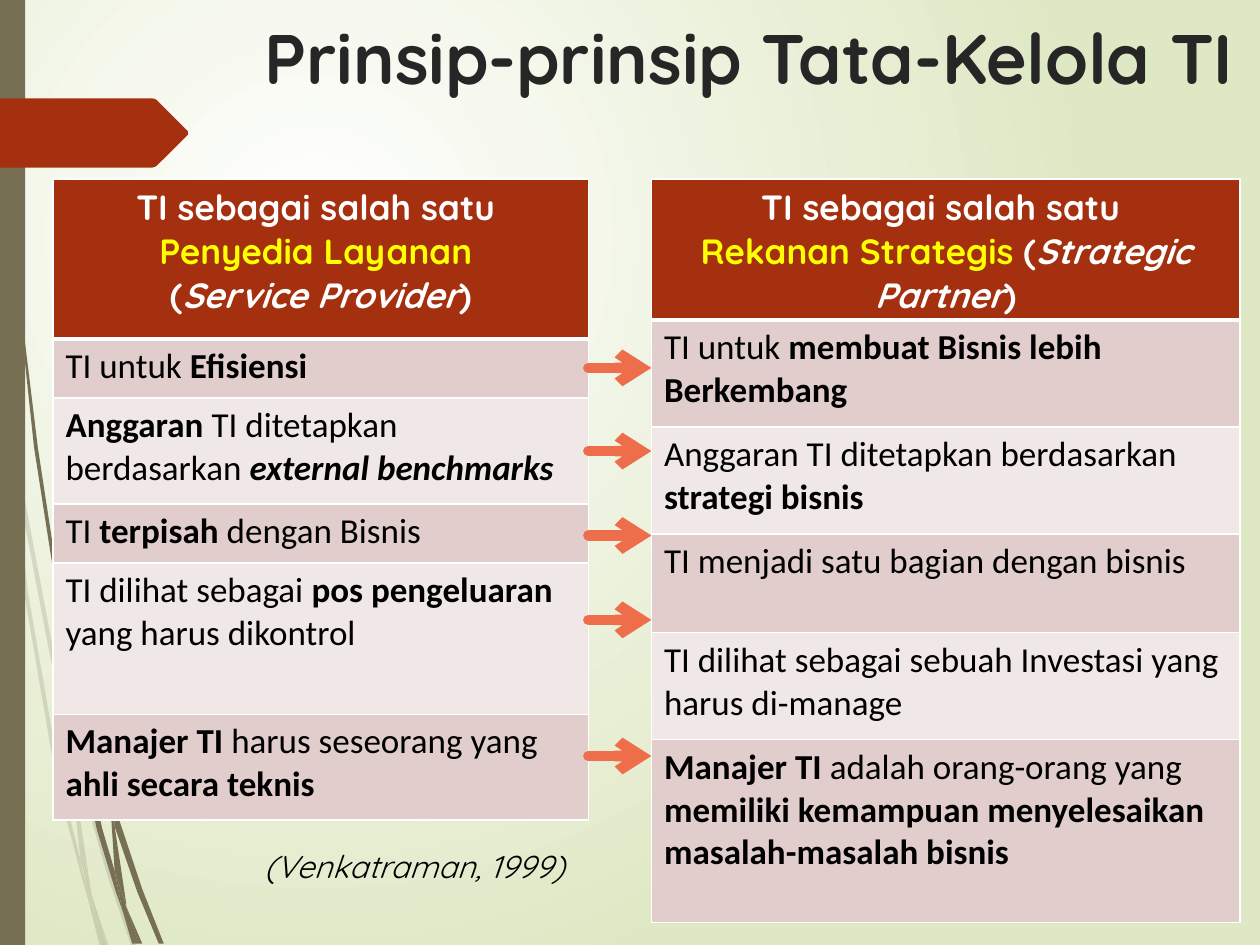
from dataclasses import dataclass
from functools import partial

from lxml.etree import SubElement as Sub
from pptx import Presentation
from pptx.dml.color import RGBColor as Rgb
from pptx.enum.shapes import MSO_CONNECTOR as Link, MSO_SHAPE as Form
from pptx.enum.text import PP_ALIGN as Align
from pptx.oxml.ns import qn
from pptx.util import Inches, Pt


@dataclass(frozen=True)
class Theme:
    head: str = "Quicksand"
    body: str = "Calibri"
    big: int = 40
    mid: int = 20
    small: int = 18
    dark: str = "262626"
    black: str = "000000"
    white: str = "FFFFFF"
    green: str = "DFE8C4"
    olive: str = "766F54"
    red: str = "A53010"
    gold: str = "FFFF00"
    coral: str = "EE6E4B"
    bands: tuple = ("E1CDCC", "F0E8E7")


def run(text, **look):
    return text, look


bold = partial(run, bold=True)
both = partial(run, bold=True, italic=True)
gold = partial(bold, color=Theme.gold)

FAINT = [
    [(.08, 3.5), (.06, 3.22), (0, 2.82), (0, 2.99), (.07, 3.44)],
    [(.4, 5.22), (.59, 5.99), (.59, 5.86), (.43, 5.2), (.1, 3.45), (.12, 3.76)],
    [(.64, 6.07), (.61, 5.96), (.61, 6.1), (.85, 6.94), (1.04, 7.5), (1.08, 7.5), (.88, 6.92)],
    [(.83, 7.5), (.86, 7.5), (.73, 7.11)],
    [(.64, 6.83), (.48, 6.19), (.22, 4.69), (.12, 3.76), (.08, 3.5), (.19, 4.7),
     (.45, 6.21), (.64, 6.93), (.7, 7.14), (.69, 7.07)],
    [(.58, 5.99), (.6, 6.46), (.64, 6.83), (.67, 6.92), (.73, 7.11), (.72, 7.06),
     (.63, 6.46), (.61, 6.1), (.61, 6.08)],
    [(.61, 5.84), (.76, 4.62), (1.11, 3.49), (1.59, 2.45), (1.87, 1.98), (2.01, 1.75),
     (2.17, 1.54), (2.17, 1.53), (2.01, 1.75), (1.86, 1.97), (1.58, 2.44), (1.1, 3.48),
     (.75, 4.61), (.59, 5.84), (.61, 5.96)],
    [(.7, 7.14), (.79, 7.5), (.82, 7.5)],
    [(.61, 6.08), (.61, 5.96), (.59, 5.86), (.58, 5.99)],
    [(.67, 6.92), (.65, 6.83), (.69, 7.07), (.7, 7.14), (.82, 7.5), (.83, 7.5), (.73, 7.11)],
]
SOLID = [
    [(.05, 1.1), (.14, 2.33), (.27, 3.55), (.46, 4.77), (.47, 4.81), (.45, 4.53),
     (.3, 3.55), (.15, 2.32), (.06, 1.09), (.04, .48), (.03, 0), (.02, 0), (.03, .48)],
    [(.73, 5.92), (.88, 6.45), (.88, 6.31), (.77, 5.9), (.5, 4.72), (.53, 5.05)],
    [(.94, 6.49), (.91, 6.41), (.91, 6.56), (1.09, 7.08), (1.26, 7.49), (1.3, 7.49), (1.13, 7.06)],
    [(.91, 6.91), (.81, 6.57), (.6, 5.56), (.53, 5.05), (.47, 4.77), (.56, 5.57),
     (.77, 6.59), (.92, 7.08), (.97, 7.22), (.96, 7.17)],
    [(.5, 4.72), (.48, 4.53), (.44, 3.49), (.48, 2.45), (.52, 1.93), (.58, 1.41),
     (.51, 1.93), (.47, 2.45), (.43, 3.49), (.45, 4.49), (.49, 4.72)],
    [(1.1, 7.49), (1.13, 7.49), (1, 7.19)],
    [(.47, 4.77), (.53, 5.05), (.5, 4.72), (.45, 4.49), (.45, 4.53)],
    [(.91, 6.33), (1.03, 5.52), (1.31, 4.76), (1.69, 4.06), (1.91, 3.74), (2.03, 3.59),
     (2.16, 3.44), (2.03, 3.58), (1.91, 3.73), (1.68, 4.05), (1.29, 4.74), (1.01, 5.51),
     (.88, 6.31), (.91, 6.41)],
    [(.97, 7.22), (1.05, 7.49), (1.08, 7.49)],
    [(.88, 6.45), (.91, 6.91), (.96, 7.06), (1, 7.19), (1, 7.16), (.91, 6.56), (.9, 6.51)],
    [(.88, 6.45), (.91, 6.56), (.91, 6.41), (.88, 6.31)],
    [(.96, 7.06), (.91, 6.91), (.96, 7.17), (.97, 7.22), (1.08, 7.49), (1.1, 7.49), (1, 7.19)],
]
TAG = [(1.49, 1.07), (1.24, 1.32), (1.21, 1.33), (0, 1.33), (0, .78), (1.21, .78),
       (1.24, .79), (1.49, 1.04)]

LEFT = [
    (1.27, [bold("TI sebagai salah satu \n"), gold("Penyedia Layanan \n"), bold("("),
            both("Service Provider"), bold(")")]),
    (.47, [run("TI untuk "), bold("Efisiensi")]),
    (.84, [bold("Anggaran "), run("TI ditetapkan berdasarkan "), both("external benchmarks")]),
    (.47, [run("TI "), bold("terpisah "), run("dengan Bisnis")]),
    (1.2, [run("TI dilihat sebagai "), bold("pos pengeluaran "), run("yang harus dikontrol")]),
    (.84, [bold("Manajer TI "), run("harus seseorang yang "), bold("ahli secara teknis")]),
]
RIGHT = [
    (1.12, [bold("TI sebagai salah satu \n"), gold("Rekanan Strategis "), bold("("),
            both("Strategic Partner"), bold(")")]),
    (.85, [run("TI untuk "), bold("membuat Bisnis lebih Berkembang")]),
    (.85, [run("Anggaran TI ditetapkan berdasarkan "), bold("strategi bisnis")]),
    (.78, [run("TI menjadi satu bagian dengan bisnis")]),
    (.85, [run("TI dilihat sebagai sebuah Investasi yang harus di-manage")]),
    (1.45, [bold("Manajer TI "), run("adalah orang-orang yang "),
            bold("memiliki kemampuan menyelesaikan masalah-masalah bisnis")]),
]


class Deck:
    """Draws styled elements on the current slide."""

    def __init__(self, show, theme):
        self.theme = theme
        self.slide = show.slides.add_slide(show.slide_layouts[6])
        self.shapes = self.slide.shapes

    def back(self):
        fill = self.slide.background.fill
        fill.gradient()
        for stop, hue in zip(fill.gradient_stops, (self.theme.white, self.theme.green)):
            stop.color.rgb = Rgb.from_string(hue)
        grad = self.slide.element.find(".//" + qn("a:gradFill"))
        grad.remove(grad.find(qn("a:lin")))
        glow = Sub(grad, qn("a:path"), {"path": "circle"})
        Sub(glow, qn("a:fillToRect"), l="50000", t="50000", r="100000", b="100000")

    def paint(self, shape, hue, alpha=None):
        shape.shadow.inherit = False
        shape.fill.solid()
        shape.fill.fore_color.rgb = Rgb.from_string(hue)
        shape.line.fill.background()
        if alpha:
            tone = shape.element.spPr.find(".//" + qn("a:srgbClr"))
            Sub(tone, qn("a:alpha"), val=str(alpha * 1000))

    def bar(self, x, y, wide, high, hue):
        box = map(Inches, (x, y, wide, high))
        self.paint(self.shapes.add_shape(Form.RECTANGLE, *box), hue)

    def blade(self, dots, hue, alpha=None):
        first, *rest = [(Inches(x), Inches(y)) for x, y in dots]
        pen = self.shapes.build_freeform(*first)
        pen.add_line_segments(rest, close=True)
        self.paint(pen.convert_to_shape(), hue, alpha)

    def words(self, para, runs, font, size, color):
        for text, look in runs:
            piece = para.add_run()
            piece.text = text.rstrip("\n")
            face = piece.font
            face.name, face.size = font, Pt(size)
            face.bold = look.get("bold", False)
            face.italic = look.get("italic", False)
            face.color.rgb = Rgb.from_string(look.get("color", color))
            if text.endswith("\n"):
                para.add_line_break()

    def text(self, x, y, wide, high, piece, size, color, wrap=True):
        frame = self.shapes.add_textbox(*map(Inches, (x, y, wide, high))).text_frame
        frame.word_wrap = wrap
        self.words(frame.paragraphs[0], [piece], self.theme.head, size, color)

    def edge(self, cell, base):
        props = cell._tc.get_or_add_tcPr()
        for spot, (side, wide) in enumerate(zip("LRTB", (1, 1, 1, base))):
            line = props.makeelement(qn(f"a:ln{side}"), {"w": str(Pt(wide))})
            props.insert(spot, line)
            Sub(Sub(line, qn("a:solidFill")), qn("a:srgbClr"), val=self.theme.white)

    def table(self, x, y, wide, rows):
        look = self.theme
        high = sum(size for size, _ in rows)
        box = map(Inches, (x, y, wide, high))
        grid = self.shapes.add_table(len(rows), 1, *box).table
        for spot, (size, runs) in enumerate(rows):
            top = spot == 0
            grid.rows[spot].height = Inches(size)
            cell = grid.cell(spot, 0)
            cell.fill.solid()
            hue = look.red if top else look.bands[(spot - 1) % 2]
            cell.fill.fore_color.rgb = Rgb.from_string(hue)
            self.edge(cell, 3 if top else 1)
            para = cell.text_frame.paragraphs[0]
            para.alignment = Align.CENTER if top else Align.LEFT
            font, ink = (look.head, look.white) if top else (look.body, look.black)
            self.words(para, runs, font, look.mid, ink)

    def arrow(self, x, end, y):
        ends = map(Inches, (x, y, end, y))
        link = self.shapes.add_connector(Link.STRAIGHT, *ends)
        link.line.color.rgb = Rgb.from_string(self.theme.coral)
        link.line.width = Pt(6)
        line = link.element.spPr.find(qn("a:ln"))
        line.set("cap", "rnd")
        Sub(line, qn("a:tailEnd"), type="arrow")
        Sub(link.element.spPr, qn("a:effectLst"))


def main():
    show = Presentation()
    show.slide_width, show.slide_height = Inches(10), Inches(7.5)
    look = Theme()
    deck = Deck(show, look)
    deck.back()
    for dots in FAINT:
        deck.blade(dots, look.olive, 20)
    for dots in SOLID:
        deck.blade(dots, look.olive)
    deck.bar(0, 0, .2, 7.5, look.olive)
    deck.blade(TAG, look.red)
    deck.text(2, .07, 7.92, 1.4, bold("Prinsip-prinsip Tata-Kelola TI"), look.big, look.dark)
    deck.table(.42, 1.42, 4.25, LEFT)
    deck.table(5.17, 1.42, 4.67, RIGHT)
    for y in (2.92, 3.58, 4.25, 4.92, 6):
        deck.arrow(4.67, 5.17, y)
    note = run("(Venkatraman, 1999)", italic=True)
    deck.text(2, 6.67, 2.78, .4, note, look.small, look.black, wrap=False)
    show.save("out.pptx")


if __name__ == "__main__":
    main()
